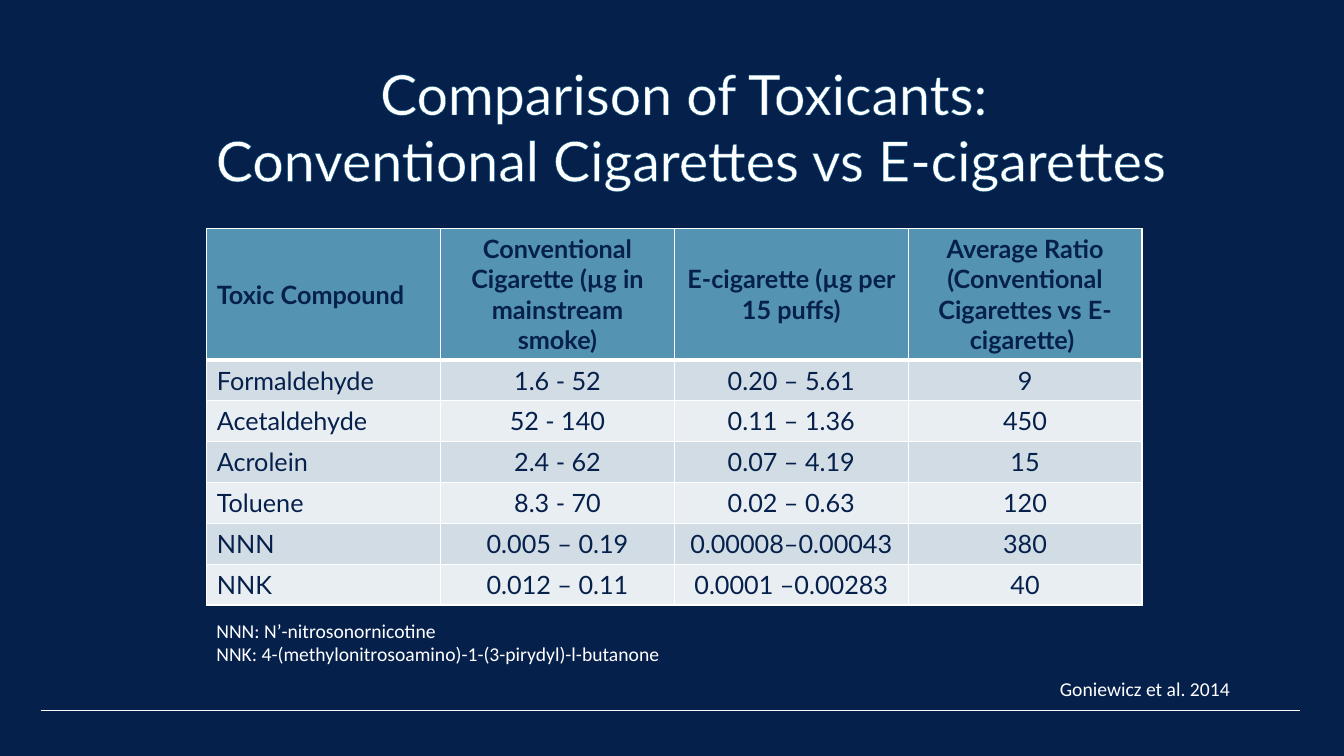
from dataclasses import dataclass

from lxml import etree
from pptx import Presentation
from pptx.dml.color import RGBColor
from pptx.enum.shapes import MSO_CONNECTOR
from pptx.enum.text import MSO_ANCHOR, PP_ALIGN
from pptx.oxml.ns import qn
from pptx.util import Pt

LEFT, CENTER = PP_ALIGN.LEFT, PP_ALIGN.CENTER
TOP, MIDDLE = MSO_ANCHOR.TOP, MSO_ANCHOR.MIDDLE
STRAIGHT = MSO_CONNECTOR.STRAIGHT


@dataclass(frozen=True)
class Theme:
    navy: str = "06204C"
    white: str = "FFFFFF"
    title_outline: str = "005782"
    header_fill: str = "5493B2"
    band_fills: tuple = ("D1DCE4", "E9EEF2")
    heading_font: str = "Lato"
    note_font: str = "Calibri"
    title_size: float = 39.6
    table_size: float = 18
    note_size: float = 14


theme = Theme()


def add_run(paragraph, text, font, size, color, bold=False):
    run = paragraph.add_run()
    run.text = text
    run.font.name = font
    run.font.size = Pt(size)
    run.font.bold = bold
    run.font.color.rgb = RGBColor.from_string(color)
    return run


def add_line(parent, index, tag, width, color):
    line = etree.Element(qn(tag), w=str(Pt(width)))
    fill = etree.SubElement(line, qn("a:solidFill"))
    etree.SubElement(fill, qn("a:srgbClr"), val=color)
    parent.insert(index, line)


presentation = Presentation()
presentation.slide_width = Pt(960)
presentation.slide_height = Pt(540)
slide = presentation.slides.add_slide(presentation.slide_layouts[6])
slide.background.fill.solid()
slide.background.fill.fore_color.rgb = RGBColor.from_string(theme.navy)

# Footer rule
rule = slide.shapes.add_connector(STRAIGHT, Pt(29), Pt(507.5), Pt(928.5), Pt(507.5))
rule.line.width = Pt(0.75)
rule.line.color.rgb = RGBColor.from_string(theme.white)
etree.SubElement(rule._element.spPr, qn("a:effectLst"))

# Title and notes: left, top, width, height, vertical margin, side margin, style, lines
title_style = (theme.heading_font, theme.title_size, theme.white)
note_style = (theme.note_font, theme.note_size, theme.white)
text_blocks = [
    (84, 60, 819, 60, 0.7, 0, title_style, MIDDLE, CENTER,
     ["Comparison of Toxicants: \vConventional Cigarettes vs E-cigarettes"]),
    (750, 480, 177, 24.5, 3.6, 7.2, note_style, TOP, LEFT,
     ["Goniewicz et al. 2014"]),
    (147.5, 438.5, 572.5, 41, 3.6, 7.2, note_style, TOP, LEFT,
     ["NNN: N’-nitrosonornicotine",
      "NNK: 4-(methylonitrosoamino)-1-(3-pirydyd)-l-butanone".replace("pirydyd", "pirydyl")]),
]
text_blocks[2][-1][1] = "NNK: 4-(methylonitrosoamino)-1-(3-pirydyl)-l-butanone"
for left, top, width, height, margin, side, style, anchor, alignment, lines in text_blocks:
    frame = slide.shapes.add_textbox(Pt(left), Pt(top), Pt(width), Pt(height)).text_frame
    frame.word_wrap = True
    frame.vertical_anchor = anchor
    frame.margin_top = frame.margin_bottom = Pt(margin)
    frame.margin_left = frame.margin_right = Pt(side)
    for number, text in enumerate(lines):
        paragraph = frame.add_paragraph() if number else frame.paragraphs[0]
        paragraph.alignment = alignment
        for part_number, part in enumerate(text.split("\v")):
            if part_number:
                paragraph.add_line_break()
            run = add_run(paragraph, part, *style)
            if style is title_style:
                add_line(run.font._element, 0, "a:ln", 0.04, theme.title_outline)

# Toxicant table
rows = [
    ("Toxic Compound", "Conventional Cigarette (µg in mainstream smoke)",
     "E-cigarette (µg per 15 puffs)",
     "Average Ratio (Conventional Cigarettes vs E-cigarette) "),
    ("Formaldehyde", "1.6 - 52", "0.20 – 5.61", "9"),
    ("Acetaldehyde", "52 - 140", "0.11 – 1.36", "450"),
    ("Acrolein", "2.4 - 62", "0.07 – 4.19", "15"),
    ("Toluene", "8.3 - 70", "0.02 – 0.63", "120"),
    ("NNN", "0.005 – 0.19", "0.00008–0.00043", "380"),
    ("NNK", "0.012 – 0.11", "0.0001 –0.00283", "40"),
]
header_height, body_height = 93.6, 29.2
table = slide.shapes.add_table(
    len(rows), len(rows[0]), Pt(147.7), Pt(163.4), Pt(668),
    Pt(header_height + body_height * (len(rows) - 1))).table
for column in table.columns:
    column.width = Pt(167)
for row_index, values in enumerate(rows):
    header = row_index == 0
    table.rows[row_index].height = Pt(header_height if header else body_height)
    fill = theme.header_fill if header else theme.band_fills[(row_index - 1) % 2]
    # The edge between header and body is heavier than the other borders
    borders = {"a:lnL": 1, "a:lnR": 1, "a:lnT": 3 if row_index == 1 else 1,
               "a:lnB": 3 if header else 1}
    for column_index, text in enumerate(values):
        cell = table.cell(row_index, column_index)
        cell.vertical_anchor = MIDDLE
        cell.fill.solid()
        cell.fill.fore_color.rgb = RGBColor.from_string(fill)
        paragraph = cell.text_frame.paragraphs[0]
        paragraph.alignment = CENTER if column_index else LEFT
        add_run(paragraph, text, theme.heading_font, theme.table_size, theme.navy, header)
        properties = cell._tc.get_or_add_tcPr()
        for index, (tag, width) in enumerate(borders.items()):
            add_line(properties, index, tag, width, theme.white)

presentation.save("out.pptx")
